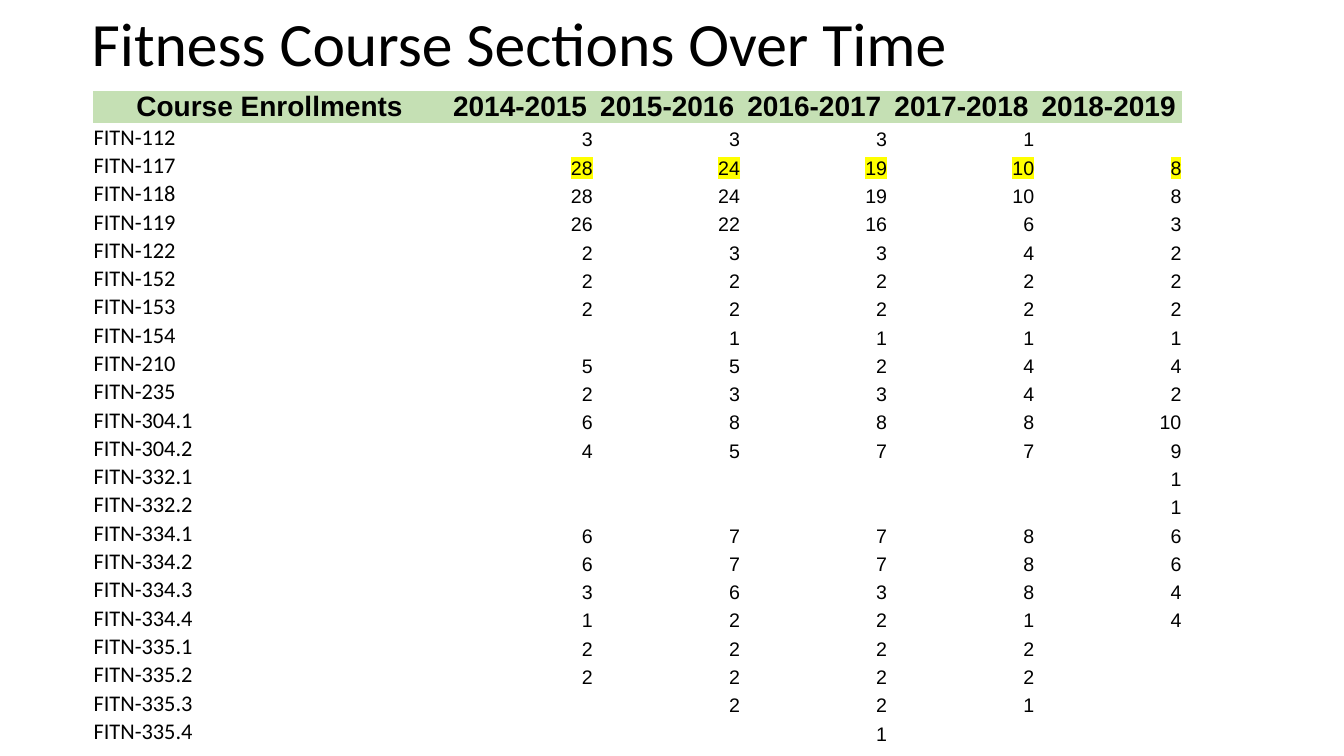
from lxml import etree
from pptx import Presentation
from pptx.dml.color import RGBColor
from pptx.enum.text import MSO_ANCHOR, MSO_AUTO_SIZE, PP_ALIGN
from pptx.oxml.ns import qn
from pptx.util import Pt

LEFT, CENTER, RIGHT = PP_ALIGN.LEFT, PP_ALIGN.CENTER, PP_ALIGN.RIGHT
MIDDLE, BOTTOM = MSO_ANCHOR.MIDDLE, MSO_ANCHOR.BOTTOM
NO_AUTOFIT = MSO_AUTO_SIZE.NONE
PLAIN_TABLE_STYLE = "{2D5ABB26-0587-4C30-8999-92F81FD0307C}"

COLORS = {"text": "000000", "header": "C5E0B4", "highlight": "FFFF00"}

TITLE_FONT = {"name": "Calibri", "size": Pt(44), "bold": False}
HEADER_FONT = {"name": "Arial", "size": Pt(20), "bold": True}
COURSE_FONT = {"name": "Calibri", "size": Pt(16), "bold": False}
COUNT_FONT = {"name": "Arial", "size": Pt(14), "bold": False}
CELL_FORMAT = {
    "vertical_anchor": BOTTOM,
    "margin_left": Pt(0.65),
    "margin_right": Pt(0.65),
    "margin_top": Pt(0.65),
    "margin_bottom": Pt(0),
}

TITLE_BOX = (58.32, -18.72, 828, 104.4)
TABLE_BOX = (66.24, 64.8, 778.32, 460)
COURSE_WIDTH = 252.72

HEADINGS = ["Course Enrollments"] + [f"{year}-{year + 1}" for year in range(2014, 2019)]
HIGHLIGHTED_COURSE = "FITN-117"
SECTIONS = [
    ("FITN-112", 3, 3, 3, 1, ""),
    ("FITN-117", 28, 24, 19, 10, 8),
    ("FITN-118", 28, 24, 19, 10, 8),
    ("FITN-119", 26, 22, 16, 6, 3),
    ("FITN-122", 2, 3, 3, 4, 2),
    ("FITN-152", 2, 2, 2, 2, 2),
    ("FITN-153", 2, 2, 2, 2, 2),
    ("FITN-154", "", 1, 1, 1, 1),
    ("FITN-210", 5, 5, 2, 4, 4),
    ("FITN-235", 2, 3, 3, 4, 2),
    ("FITN-304.1", 6, 8, 8, 8, 10),
    ("FITN-304.2", 4, 5, 7, 7, 9),
    ("FITN-332.1", "", "", "", "", 1),
    ("FITN-332.2", "", "", "", "", 1),
    ("FITN-334.1", 6, 7, 7, 8, 6),
    ("FITN-334.2", 6, 7, 7, 8, 6),
    ("FITN-334.3", 3, 6, 3, 8, 4),
    ("FITN-334.4", 1, 2, 2, 1, 4),
    ("FITN-335.1", 2, 2, 2, 2, ""),
    ("FITN-335.2", 2, 2, 2, 2, ""),
    ("FITN-335.3", "", 2, 2, 1, ""),
    ("FITN-335.4", "", "", 1, "", ""),
]


def apply_format(target, values):
    for attribute, value in values.items():
        setattr(target, attribute, value)


def write_text(paragraph, text, font, align):
    paragraph.alignment = align
    run = paragraph.add_run()
    run.text = text
    apply_format(run.font, font)
    run.font.color.rgb = RGBColor.from_string(COLORS["text"])
    return run


def highlight(run):
    text_fill = next(run.font.fill._xPr.iter(qn("a:solidFill")))
    marker = etree.Element(qn("a:highlight"))
    etree.SubElement(marker, qn("a:srgbClr"), val=COLORS["highlight"])
    text_fill.addnext(marker)


def fill_cell(cell, text, font, align, color=None, marked=False):
    apply_format(cell, CELL_FORMAT)
    if color:
        cell.fill.solid()
        cell.fill.fore_color.rgb = RGBColor.from_string(color)
    else:
        cell.fill.background()
    paragraph = cell.text_frame.paragraphs[0]
    if text == "":
        size = str(int(font["size"].pt * 100))
        etree.SubElement(paragraph._p, qn("a:endParaRPr"), sz=size)
        return
    run = write_text(paragraph, str(text), font, align)
    if marked:
        highlight(run)


def add_title(slide, box):
    title = slide.shapes.title
    title.left, title.top, title.width, title.height = map(Pt, box)
    frame = title.text_frame
    apply_format(frame, {"auto_size": NO_AUTOFIT, "vertical_anchor": MIDDLE, "word_wrap": True})
    heading = frame.paragraphs[0]
    heading.line_spacing = 0.9
    write_text(heading, "Fitness Course Sections Over Time", TITLE_FONT, LEFT)


def add_sections_table(slide, box):
    row_count, column_count = len(SECTIONS) + 1, len(HEADINGS)
    holder = slide.shapes.add_table(row_count, column_count, *map(Pt, box))
    next(holder.element.iter(qn("a:tableStyleId"))).text = PLAIN_TABLE_STYLE
    table = holder.table
    apply_format(table, {"first_row": False, "horz_banding": False})

    year_width = (box[2] - COURSE_WIDTH) / (column_count - 1)
    for index, column in enumerate(table.columns):
        column.width = Pt(year_width if index else COURSE_WIDTH)
    for row in table.rows:
        row.height = Pt(box[3] / row_count)

    for index, heading in enumerate(HEADINGS):
        fill_cell(table.cell(0, index), heading, HEADER_FONT, CENTER, COLORS["header"])
    for row_index, (course, *counts) in enumerate(SECTIONS, start=1):
        fill_cell(table.cell(row_index, 0), course, COURSE_FONT, LEFT)
        for column_index, count in enumerate(counts, start=1):
            fill_cell(table.cell(row_index, column_index), count, COUNT_FONT, RIGHT,
                      marked=course == HIGHLIGHTED_COURSE)


def main():
    presentation = Presentation()
    presentation.slide_width, presentation.slide_height = Pt(960), Pt(540)
    slide = presentation.slides.add_slide(presentation.slide_layouts[5])
    add_title(slide, TITLE_BOX)
    add_sections_table(slide, TABLE_BOX)
    presentation.save("out.pptx")


if __name__ == "__main__":
    main()
